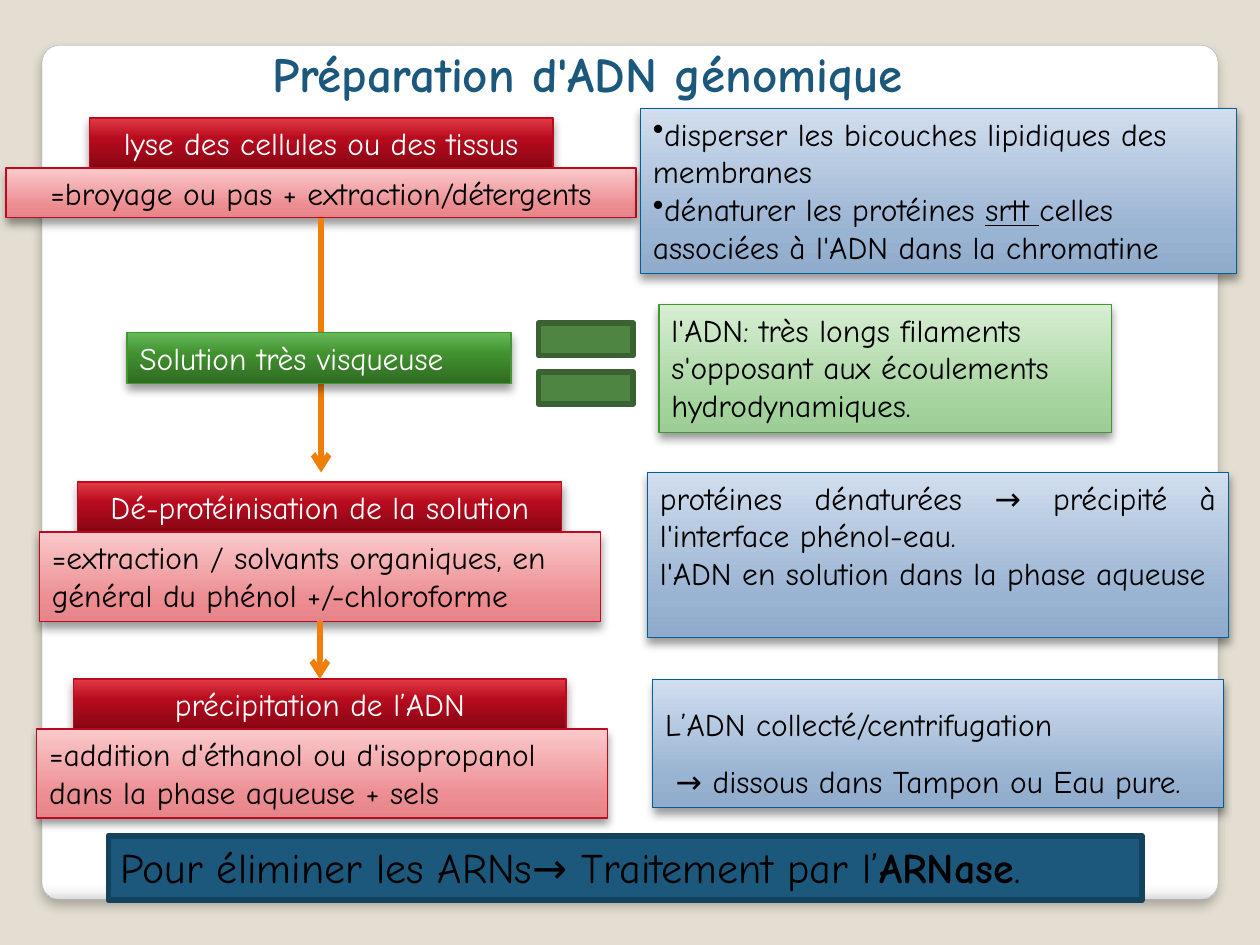
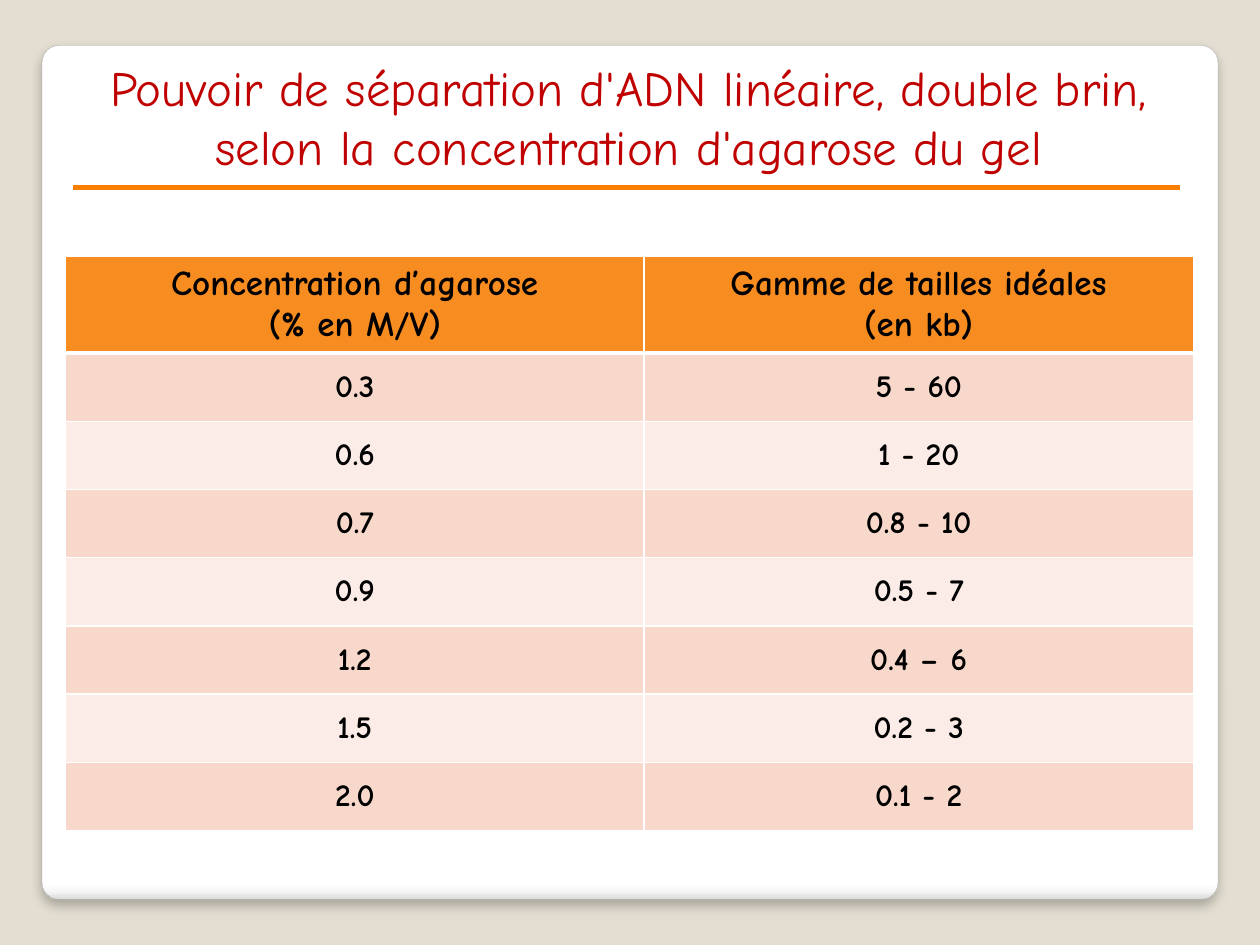
from lxml.etree import SubElement
from pptx import Presentation
from pptx.dml.color import RGBColor
from pptx.enum.shapes import MSO_CONNECTOR, MSO_SHAPE
from pptx.enum.text import MSO_ANCHOR, PP_ALIGN
from pptx.oxml import parse_xml
from pptx.oxml.ns import nsdecls, qn
from pptx.util import Pt

FONT = "Comic Neue"
BLACK, WHITE, ORANGE = "000000", "FFFFFF", "F07F09"
LEFT, CENTER, JUSTIFY = PP_ALIGN.LEFT, PP_ALIGN.CENTER, PP_ALIGN.JUSTIFY
colour = RGBColor.from_string

# Panel styles: gradient stops from bottom to top, line colour, text colour
STYLES = {
    "red": ([(0, "870614"), (60, "B80B1E"), (100, "E13C45")], "BC0B1F", WHITE),
    "pink": ([(0, "E68589"), (25, "EC8D92"), (100, "FBCACC")], "BC0B1F", BLACK),
    "blue": ([(0, "90ABCB"), (25, "99B3D2"), (100, "D1DEEE")], "035E94", BLACK),
    "green": ([(0, "2F6B22"), (60, "429230"), (100, "66B959")], "439631", WHITE),
    "light green": ([(0, "9DCD96"), (25, "A5D49E"), (100, "D7EED3")], "439631", BLACK),
}
CARD_STOPS = [(0, WHITE), (98, WHITE), (99, "F7F7F7"), (100, "DADADA")]
PANEL_SHADOW = (40, 5.2, 3)  # opacity in percent, blur, distance
CARD_SHADOW = (25, 6, 4)


def paint(shape, fill, line, width, shadow=None, angle=270):
    """Fill with one colour or with gradient stops, then set line and shadow."""
    shape.fill.solid()
    if isinstance(fill, str):
        shape.fill.fore_color.rgb = colour(fill)
    else:
        stops = "".join(
            f'<a:gs pos="{place * 1000}"><a:srgbClr val="{shade}"/></a:gs>'
            for place, shade in fill)
        solid = shape.element.spPr.find(qn("a:solidFill"))
        solid.getparent().replace(solid, parse_xml(
            f'<a:gradFill {nsdecls("a")} rotWithShape="1"><a:gsLst>{stops}</a:gsLst>'
            f'<a:lin ang="{angle * 60000}" scaled="0"/></a:gradFill>'))
    shape.line.color.rgb = colour(line)
    shape.line.width = Pt(width)
    shape.shadow.inherit = False
    if shadow:
        opacity, blur, distance = shadow
        shape.element.spPr.find(qn("a:effectLst")).append(parse_xml(
            f'<a:outerShdw {nsdecls("a")} blurRad="{Pt(blur)}" dist="{Pt(distance)}" '
            f'dir="5400000" algn="ctr" rotWithShape="0"><a:srgbClr val="000000">'
            f'<a:alpha val="{opacity * 1000}"/></a:srgbClr></a:outerShdw>'))


def write(text_frame, lines, size, shade, align, bold=None):
    """Write one paragraph per line; a bar in a line starts a new run."""
    text_frame.word_wrap = True
    text_frame.vertical_anchor = MSO_ANCHOR.TOP
    for number, line in enumerate(lines):
        paragraph = text_frame.add_paragraph() if number else text_frame.paragraphs[0]
        paragraph.alignment = align
        for part in line.split("|"):
            run = paragraph.add_run()
            run.text = part
            run.font.name = FONT
            run.font.size = Pt(size)
            run.font.bold = bold
            run.font.color.rgb = colour(shade)


presentation = Presentation()
presentation.slide_width, presentation.slide_height = Pt(720), Pt(540)

# Background and card shared by both slides
slides = []
for _ in range(2):
    slide = presentation.slides.add_slide(presentation.slide_layouts[6])
    slide.background.fill.solid()
    slide.background.fill.fore_color.rgb = colour("E3DED1")
    card = slide.shapes.add_shape(
        MSO_SHAPE.ROUNDED_RECTANGLE, Pt(24), Pt(26), Pt(672), Pt(488))
    card.adjustments[0] = 0.02
    paint(card, CARD_STOPS, "A4A4A4", 0.16, CARD_SHADOW, angle=90)
    slides.append(slide)
preparation, separation = slides

# Slide 1: title
title = preparation.shapes.add_textbox(Pt(148.5), Pt(21.5), Pt(423.5), Pt(42))
write(title.text_frame, ["Préparation d'ADN génomique"], 28, "1B587C", LEFT, bold=True)

# Slide 1: panels of the three steps and of the viscous solution
panels = {
    "lysis": ("red", 51, 67.5, 265, 28.5, CENTER, ["lyse des cellules ou des tissus"]),
    "grinding": ("pink", 3.5, 96, 360, 28.5, CENTER,
                 ["=broyage ou pas + extraction/détergents"]),
    "detergent role": ("blue", 366, 62, 340.5, 94.5, LEFT,
                       ["disperser les bicouches lipidiques des membranes",
                        "dénaturer les protéines |srtt |celles associées à l'ADN "
                        "dans la chromatine"]),
    "deproteinisation": ("red", 44.5, 275.5, 276.5, 28.5, CENTER,
                         ["Dé-protéinisation de la solution"]),
    "solvents": ("pink", 22.5, 304, 320.5, 51, LEFT,
                 ["=extraction / solvants organiques, en général du phénol "
                  "+/-chloroforme"]),
    "phases": ("blue", 370, 270, 332, 94.5, JUSTIFY,
               ["protéines dénaturées → précipité à l'interface phénol-eau.",
                "l'ADN en solution dans la phase aqueuse"]),
    "precipitation": ("red", 42, 388, 281.5, 28.5, CENTER, ["précipitation de l’ADN"]),
    "alcohol": ("pink", 21, 416.5, 326, 51, LEFT,
                ["=addition d'éthanol ou d'isopropanol dans la phase aqueuse + sels"]),
    "collection": ("blue", 373, 388.5, 326, 73, JUSTIFY,
                   ["L’ADN collecté/centrifugation",
                    " → dissous dans Tampon ou Eau pure."]),
    "viscous solution": ("green", 72.5, 190, 219.5, 29, LEFT, ["Solution très visqueuse"]),
    "long strands": ("light green", 376.5, 174, 258.5, 73, LEFT,
                     ["l'ADN: très longs filaments",
                      "s'opposant aux écoulements hydrodynamiques."]),
}
shapes = {}
for name, (style, left, top, width, height, align, lines) in panels.items():
    stops, line_colour, text_colour = STYLES[style]
    shape = preparation.shapes.add_shape(
        MSO_SHAPE.RECTANGLE, Pt(left), Pt(top), Pt(width), Pt(height))
    paint(shape, stops, line_colour, 0.75, PANEL_SHADOW)
    write(shape.text_frame, lines, 18, text_colour, align)
    shapes[name] = shape

# Slide 1: bullets, underline and wide line spacing
for paragraph in shapes["detergent role"].text_frame.paragraphs:
    properties = paragraph._p.get_or_add_pPr()
    SubElement(properties, qn("a:buChar")).set("char", "•")
paragraph.runs[1].font.underline = True
for paragraph in shapes["collection"].text_frame.paragraphs:
    paragraph.line_spacing = 1.5

# Slide 1: arrows between the steps
long_arrow = preparation.shapes.add_connector(
    MSO_CONNECTOR.STRAIGHT, Pt(183.5), Pt(124.5), Pt(183.5), Pt(270))
long_arrow.begin_connect(shapes["grinding"], 2)
short_arrow = preparation.shapes.add_connector(
    MSO_CONNECTOR.STRAIGHT, Pt(182.75), Pt(355), Pt(182.75), Pt(388))
short_arrow.begin_connect(shapes["solvents"], 2)
short_arrow.end_connect(shapes["precipitation"], 0)
for arrow in (long_arrow, short_arrow):
    arrow.line.color.rgb = colour(ORANGE)
    arrow.line.width = Pt(3.35)
    SubElement(arrow.line._get_or_add_ln(), qn("a:tailEnd")).set("type", "arrow")
    SubElement(arrow.element.spPr, qn("a:effectLst"))
# The long arrow passes behind the viscous solution
shapes["viscous solution"].element.addprevious(long_arrow.element)

# Slide 1: equal sign and closing banner
equal_sign = preparation.shapes.add_shape(
    MSO_SHAPE.MATH_EQUAL, Pt(298), Pt(168.5), Pt(73.5), Pt(78.5))
paint(equal_sign, "4E8542", "3A6231", 3.35)
banner = preparation.shapes.add_shape(
    MSO_SHAPE.RECTANGLE, Pt(62), Pt(477.5), Pt(590.5), Pt(37))
paint(banner, "1B587C", "14415C", 3.35)
write(banner.text_frame, ["Pour éliminer les ARNs→ Traitement par l’|ARNase|."],
      24, BLACK, JUSTIFY)
banner.text_frame.paragraphs[0].runs[1].font.bold = True

# Slide 2: title and rule
title = separation.shapes.add_textbox(Pt(29.5), Pt(29.5), Pt(659.5), Pt(75))
write(title.text_frame,
      ["Pouvoir de séparation d'ADN linéaire, double brin, "
       "selon la concentration d'agarose du gel"], 28, "C00000", CENTER)
rule = separation.shapes.add_connector(
    MSO_CONNECTOR.STRAIGHT, Pt(42), Pt(107), Pt(674.5), Pt(107))
rule.line.color.rgb = colour("F97F00")
rule.line.width = Pt(3)
SubElement(rule.element.spPr, qn("a:effectLst"))

# Slide 2: table of agarose concentrations
rows = [
    (["Concentration d’agarose", "(% en M/V)"], ["Gamme de tailles idéales", "(en kb)"]),
    (["0.3"], ["5 - 60"]),
    (["0.6"], ["1 - 20"]),
    (["0.7"], ["0.8 - 10"]),
    (["0.9"], ["0.5 - 7"]),
    (["1.2"], ["0.4 – 6"]),
    (["1.5"], ["0.2 - 3"]),
    (["2.0"], ["0.1 - 2"]),
]
table = separation.shapes.add_table(
    len(rows), 2, Pt(37.5), Pt(146.5), Pt(644.5), Pt(327)).table
for column, width in zip(table.columns, (330.5, 314)):
    column.width = Pt(width)
for row_number, row in enumerate(rows):
    header = row_number == 0
    table.rows[row_number].height = Pt(54 if header else 39)
    fill = "F78C21" if header else ("FCECE7", "F9D8CC")[row_number % 2]
    borders = {"L": 1, "R": 1, "T": 3 if row_number == 1 else 1, "B": 3 if header else 1}
    for column_number, lines in enumerate(row):
        cell = table.cell(row_number, column_number)
        write(cell.text_frame, lines, 20 if header else 18, BLACK, CENTER, bold=True)
        cell.vertical_anchor = MSO_ANCHOR.MIDDLE
        cell.fill.solid()
        cell.fill.fore_color.rgb = colour(fill)
        for position, (side, width) in enumerate(borders.items()):
            cell._tc.tcPr.insert(position, parse_xml(
                f'<a:ln{side} {nsdecls("a")} w="{Pt(width)}"><a:solidFill>'
                f'<a:srgbClr val="{WHITE}"/></a:solidFill></a:ln{side}>'))

presentation.save("out.pptx")
